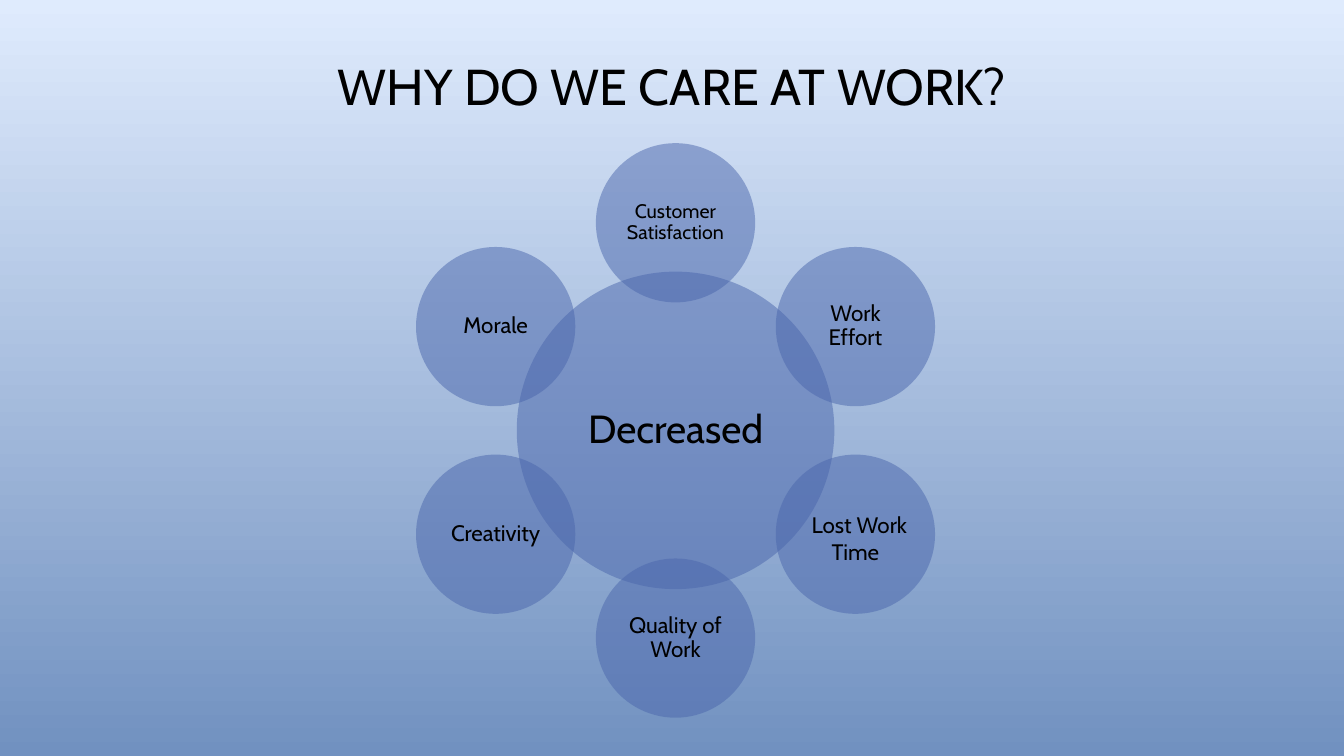
from math import cos, radians, sin

from lxml.etree import SubElement
from pptx import Presentation
from pptx.dml.color import RGBColor
from pptx.enum.shapes import MSO_SHAPE
from pptx.enum.text import MSO_ANCHOR, PP_ALIGN
from pptx.oxml.ns import qn
from pptx.util import Inches, Pt

CENTER_X, CENTER_Y = 6.7, 4.27
ORBIT_RADIUS = 2.06
HUB_SIZE, SATELLITE_SIZE = 3.15, 1.58

# Clockwise from the top; each entry is a list of (text, size) runs
SATELLITES = [
    [("Customer Satisfaction", 14)],
    [("Work Effort", 16)],
    [(" ", 25), ("Lost Work Time", 16)],
    [("Quality of Work", 16)],
    [("Creativity", 16)],
    [("Morale", 16)],
]


def color(hex_string):
    return RGBColor.from_string(hex_string)


class SlideBuilder:
    font = "Cabin"
    text_color = "000000"
    circle_color = "4A66AC"
    circle_opacity = 50

    def __init__(self, slide):
        self.slide = slide

    def background(self, top, bottom):
        fill = self.slide.background.fill
        fill.gradient()
        fill.gradient_angle = 270
        for stop, position, shade in zip(fill.gradient_stops, (0, 1), (top, bottom)):
            stop.position = position
            stop.color.rgb = color(shade)

    def add_label(self, shape, runs, inset=None):
        """Centre the runs in the shape as one paragraph."""
        frame = shape.text_frame
        frame.word_wrap = True
        frame.vertical_anchor = MSO_ANCHOR.MIDDLE
        if inset is not None:
            frame.margin_left = frame.margin_right = Inches(inset)
            frame.margin_top = frame.margin_bottom = Inches(inset)
        paragraph = frame.paragraphs[0]
        paragraph.alignment = PP_ALIGN.CENTER
        paragraph.line_spacing = 0.9
        for text, size in runs:
            run = paragraph.add_run()
            run.text = text
            run.font.name = self.font
            run.font.size = Pt(size)
            run.font.color.rgb = color(self.text_color)

    def title(self, text):
        box = self.slide.shapes.add_textbox(
            Inches(1), Inches(0.34), Inches(11.33), Inches(1.08))
        self.add_label(box, [(text, 36)])

    def circle(self, center_x, center_y, size, runs, inset):
        shape = self.slide.shapes.add_shape(
            MSO_SHAPE.OVAL, Inches(center_x - size / 2), Inches(center_y - size / 2),
            Inches(size), Inches(size))
        shape.shadow.inherit = False
        shape.line.fill.background()
        shape.fill.solid()
        shape.fill.fore_color.rgb = color(self.circle_color)
        fill_color = shape.element.spPr.find(qn("a:solidFill"))[0]
        SubElement(fill_color, qn("a:alpha"), val=str(self.circle_opacity * 1000))
        self.add_label(shape, runs, inset)


def main():
    presentation = Presentation()
    presentation.slide_width = Inches(13.33)
    presentation.slide_height = Inches(7.5)
    builder = SlideBuilder(presentation.slides.add_slide(presentation.slide_layouts[6]))

    builder.background("DFEBFD", "7191C0")
    builder.title("WHY DO WE CARE AT WORK?")
    builder.circle(CENTER_X, CENTER_Y, HUB_SIZE, [("Decreased", 28)], 0.04)
    for index, runs in enumerate(SATELLITES):
        angle = radians(index * 360 / len(SATELLITES) - 90)
        builder.circle(CENTER_X + ORBIT_RADIUS * cos(angle),
                       CENTER_Y + ORBIT_RADIUS * sin(angle),
                       SATELLITE_SIZE, runs, 0.02)

    presentation.save("out.pptx")


if __name__ == "__main__":
    main()
